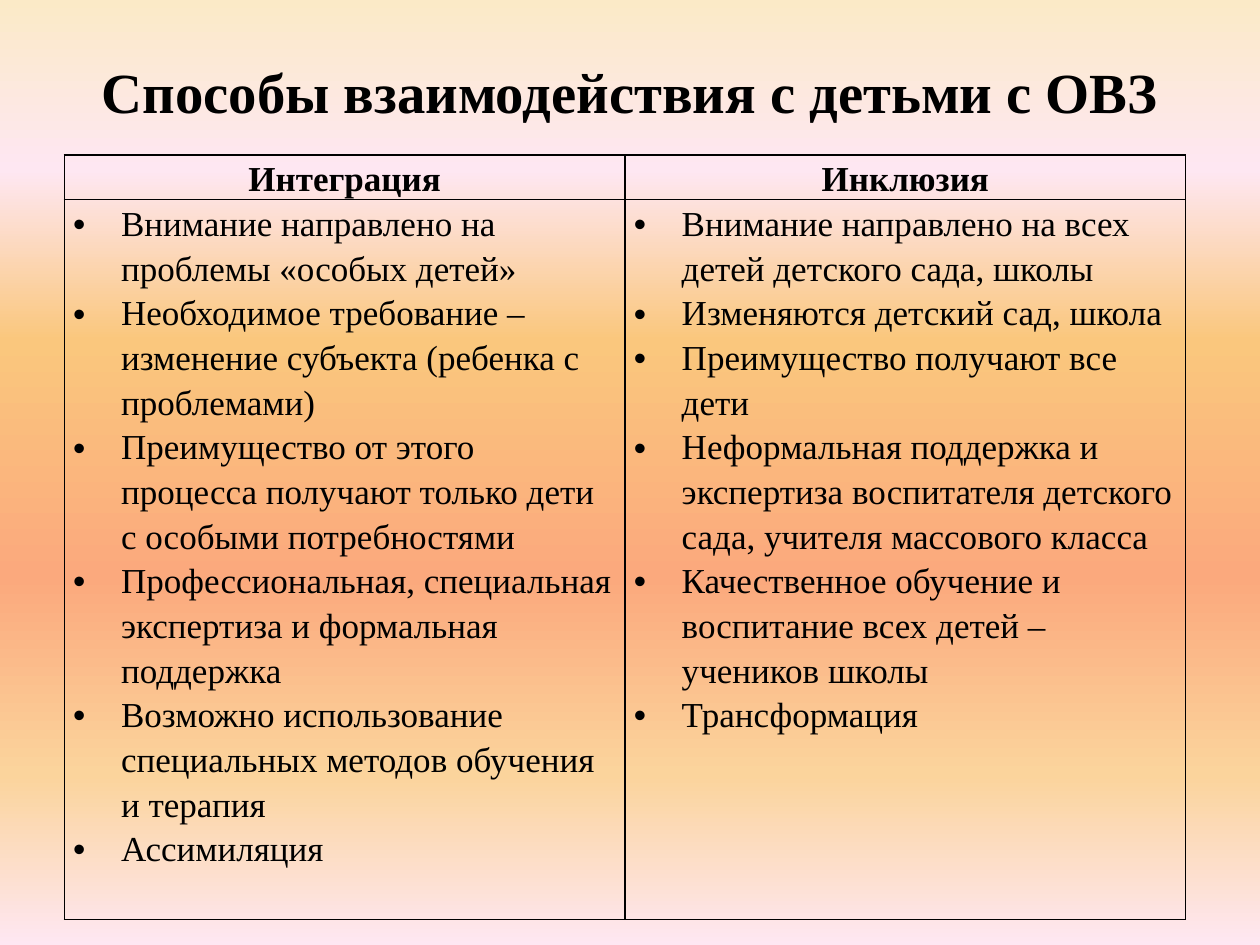
from lxml.etree import SubElement
from pptx import Presentation
from pptx.dml.color import RGBColor
from pptx.enum.text import MSO_ANCHOR as Anchor, PP_ALIGN as Align
from pptx.oxml.ns import qn
from pptx.util import Pt

BACKGROUND = [(0, "FBEAC7"), (18, "FEE7F2"), (36, "FAC77D"),
              (61, "FBA97D"), (82, "FBD49C"), (100, "FEE7F2")]
TITLE = "Способы взаимодействия с детьми с ОВЗ"
APPROACHES = {
    "Интеграция": [
        "Внимание направлено на проблемы «особых детей»",
        "Необходимое требование – изменение субъекта (ребенка с проблемами)",
        "Преимущество от этого процесса получают только дети с особыми потребностями",
        "Профессиональная, специальная экспертиза и формальная поддержка",
        "Возможно использование специальных методов обучения и терапия",
        "Ассимиляция",
    ],
    "Инклюзия": [
        "Внимание направлено на всех детей детского сада, школы",
        "Изменяются детский сад, школа",
        "Преимущество получают все дети",
        "Неформальная поддержка и экспертиза воспитателя детского сада, "
        "учителя массового класса",
        "Качественное обучение и воспитание всех детей – учеников школы",
        "Трансформация",
    ],
}


def color(hex_value):
    return RGBColor.from_string(hex_value)


def add_solid_fill(parent, hex_value):
    fill = SubElement(parent, qn("a:solidFill"))
    SubElement(fill, qn("a:srgbClr"), val=hex_value)


def write(frame, lines, size=20, bold=False, align=Align.LEFT,
          spacing=None, bullet=None, indent=27.4):
    """Put one paragraph per line into the frame."""
    for number, line in enumerate(lines):
        paragraph = frame.add_paragraph() if number else frame.paragraphs[0]
        paragraph.alignment = align
        if spacing:
            paragraph.line_spacing = spacing
        if bullet:
            properties = paragraph._p.get_or_add_pPr()
            properties.set("marL", str(Pt(indent)))
            properties.set("indent", str(-Pt(indent)))
            SubElement(properties, qn("a:buFont"), typeface="Arial")
            SubElement(properties, qn("a:buChar"), char=bullet)
        run = paragraph.add_run()
        run.text = line
        run.font.name = Deck.font
        run.font.size = Pt(size)
        run.font.bold = bold
        run.font.color.rgb = color(Deck.ink)


class Deck:
    font = "Times New Roman"
    ink = "000000"

    def __init__(self):
        self.presentation = Presentation()
        self.presentation.slide_width = Pt(720)
        self.presentation.slide_height = Pt(540)
        self.slide = self.presentation.slides.add_slide(
            self.presentation.slide_layouts[5])

    def background(self, stops):
        fill = self.slide.background.fill
        fill.gradient()
        fill.gradient_angle = 270
        stop_list = self.slide.element.find(".//" + qn("a:gsLst"))
        for default_stop in list(stop_list):
            stop_list.remove(default_stop)
        for percent, hex_value in stops:
            stop = SubElement(stop_list, qn("a:gs"), pos=str(percent * 1000))
            SubElement(stop, qn("a:srgbClr"), val=hex_value)

    def title(self, text, left, top, width, height):
        heading = self.slide.shapes.title
        heading.left, heading.top = Pt(left), Pt(top)
        heading.width, heading.height = Pt(width), Pt(height)
        heading.text_frame.vertical_anchor = Anchor.MIDDLE
        write(heading.text_frame, [text], size=32.4, bold=True, align=Align.CENTER)

    def comparison(self, columns, left, top, width, row_heights):
        """Add a table with a heading and a bulleted list in each column."""
        table = self.slide.shapes.add_table(
            len(row_heights), len(columns), Pt(left), Pt(top),
            Pt(width), Pt(sum(row_heights))).table
        table.first_row = table.horz_banding = False
        for row, height in zip(table.rows, row_heights):
            row.height = Pt(height)
        for index, (heading, points) in enumerate(columns.items()):
            table.columns[index].width = Pt(width / len(columns))
            write(table.cell(0, index).text_frame, [heading], bold=True,
                  align=Align.CENTER, spacing=1.15)
            write(table.cell(1, index).text_frame, points,
                  spacing=1.15, bullet="•")
        for cell in table.iter_cells():
            self.frame_cell(cell)

    def frame_cell(self, cell):
        cell.margin_left = cell.margin_right = Pt(5)
        cell.margin_top = cell.margin_bottom = Pt(0)
        properties = cell._tc.get_or_add_tcPr()
        for side in "LRTB":
            border = SubElement(properties, qn(f"a:ln{side}"), w=str(Pt(1)))
            add_solid_fill(border, self.ink)
        cell.fill.background()


def main():
    deck = Deck()
    deck.background(BACKGROUND)
    deck.title(TITLE, 36, 21.6, 648, 61.2)
    deck.comparison(APPROACHES, 36.8, 88.5, 640.8, [25.2, 411.4])
    deck.presentation.save("out.pptx")


if __name__ == "__main__":
    main()
